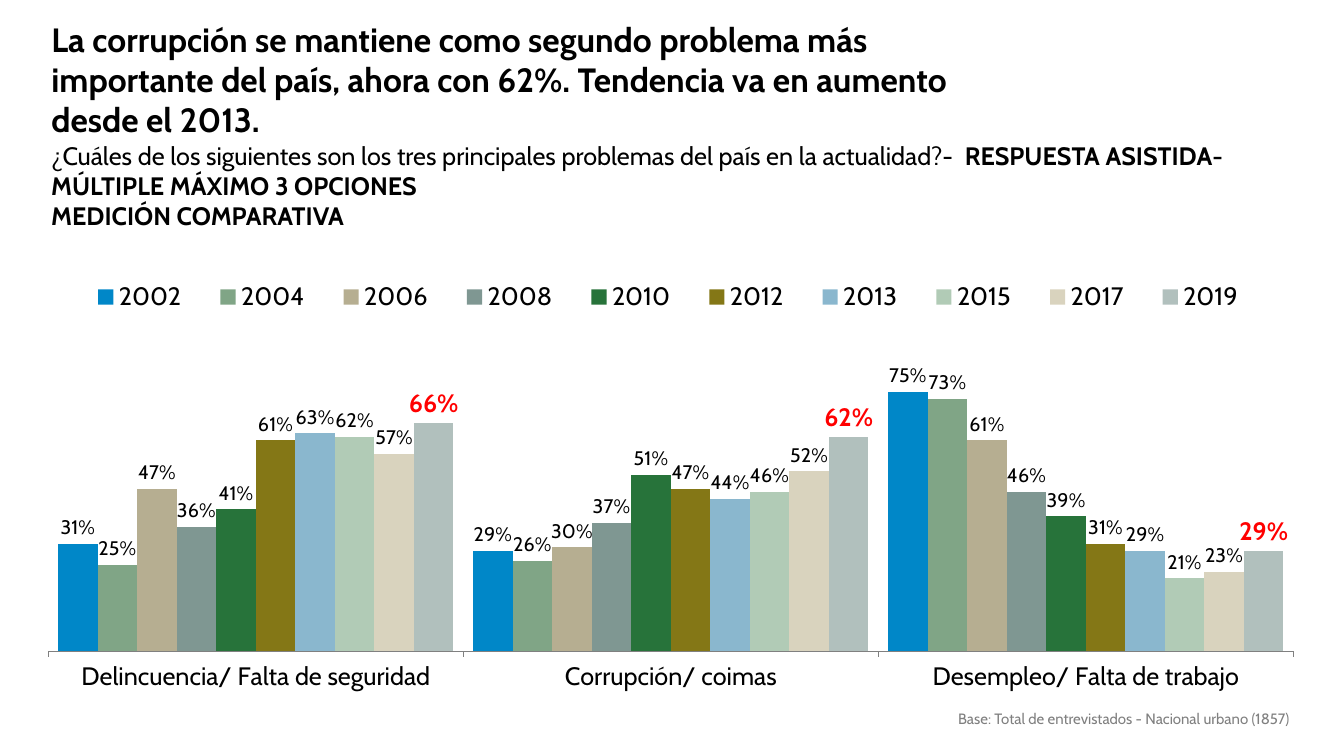
import pptx
import pptx.util
import pptx.chart.data
import pptx.dml.color
import pptx.enum.chart
import pptx.enum.text
import pptx.oxml

RGBColor = pptx.dml.color.RGBColor
Inches = pptx.util.Inches
Pt = pptx.util.Pt
ALIGN = pptx.enum.text.PP_ALIGN
ANCHOR = pptx.enum.text.MSO_ANCHOR
CHART = pptx.enum.chart

BLACK = RGBColor(0x00, 0x00, 0x00)
GRAY = RGBColor(0x80, 0x80, 0x80)
RED = RGBColor(0xFF, 0x00, 0x00)
FONT = "Cabin"
WIDTH, HEIGHT = 13.33, 7.5

TITLE = ("La corrupción se mantiene como segundo problema más importante del país, "
         "ahora con 62%. Tendencia va en aumento desde el 2013.")
QUESTION = [
    [("¿Cuáles de los siguientes son los tres principales problemas del país en la actualidad?-  ", False),
     ("RESPUESTA ASISTIDA- MÚLTIPLE MÁXIMO 3 OPCIONES", True)],
    [("MEDICIÓN COMPARATIVA", True)],
]
BASE = "Base: Total de entrevistados - Nacional urbano (1857)"
PROBLEMS = ["Delincuencia/ Falta de seguridad", "Corrupción/ coimas", "Desempleo/ Falta de trabajo"]
YEARS = [
    ("2002", (0.31, 0.29, 0.75), RGBColor(0x00, 0x87, 0xC8)),
    ("2004", (0.25, 0.26, 0.73), RGBColor(0x80, 0xA5, 0x86)),
    ("2006", (0.47, 0.30, 0.61), RGBColor(0xB6, 0xAE, 0x91)),
    ("2008", (0.36, 0.37, 0.46), RGBColor(0x7F, 0x97, 0x92)),
    ("2010", (0.41, 0.51, 0.39), RGBColor(0x27, 0x73, 0x3A)),
    ("2012", (0.61, 0.47, 0.31), RGBColor(0x84, 0x77, 0x16)),
    ("2013", (0.63, 0.44, 0.29), RGBColor(0x8A, 0xB7, 0xCE)),
    ("2015", (0.62, 0.46, 0.21), RGBColor(0xB1, 0xCB, 0xB6)),
    ("2017", (0.57, 0.52, 0.23), RGBColor(0xD9, 0xD3, 0xBE)),
    ("2019", (0.66, 0.62, 0.29), RGBColor(0xB1, 0xC0, 0xBD)),
]
TEXT_LEFT = 0.41
TITLE_AREA = (TEXT_LEFT, 0.23, 9.79, 1.11)
QUESTION_AREA = (TEXT_LEFT, 1.34, 12.35, 1.01)
BASE_AREA = (5.94, 7.01, 6.95, 0.26)
CHART_AREA = (-0.55, 2.35, 13.54, 4.97)
PLOT_SHARES = (0.076, 0.275, 0.912, 0.552)
LEGEND_SHARES = (0.09, 0.07, 0.88, 0.1)


def style(font, size, color=BLACK, bold=False):
    font.name = FONT
    font.size = Pt(size)
    font.bold = bold
    font.color.rgb = color


def add_text(page, area, lines, size, color=BLACK, align=ALIGN.LEFT, spacing=1.0):
    box = page.shapes.add_textbox(*map(Inches, area))
    frame = box.text_frame
    frame.word_wrap = True
    for index, line in enumerate(lines):
        para = frame.paragraphs[0] if index == 0 else frame.add_paragraph()
        para.alignment = align
        para.line_spacing = spacing
        for text, bold in line:
            span = para.add_run()
            span.text = text
            style(span.font, size, color, bold)


def make_layout(shares, inner=False):
    target = '<c:layoutTarget val="inner"/>' if inner else ""
    modes = '<c:xMode val="edge"/><c:yMode val="edge"/>'
    sizes = "".join(f'<c:{key} val="{share}"/>' for key, share in zip("xywh", shares))
    return pptx.oxml.parse_xml(
        '<c:layout xmlns:c="http://schemas.openxmlformats.org/drawingml/2006/chart">'
        f"<c:manualLayout>{target}{modes}{sizes}</c:manualLayout></c:layout>")


def place(parent, layout, index):
    for child in list(parent):
        if child.tag == layout.tag:
            parent.remove(child)
    parent.insert(index, layout)


def add_problem_chart(page):
    data = pptx.chart.data.CategoryChartData(number_format="0%")
    data.categories = PROBLEMS
    for year, values, color in YEARS:
        data.add_series(year, values)
    chart = page.shapes.add_chart(
        CHART.XL_CHART_TYPE.COLUMN_CLUSTERED, *map(Inches, CHART_AREA), data).chart
    style(chart.font, 18)
    chart.has_title = False

    chart.has_legend = True
    chart.legend.position = CHART.XL_LEGEND_POSITION.TOP
    chart.legend.include_in_layout = False
    style(chart.legend.font, 18)

    values_axis = chart.value_axis
    values_axis.minimum_scale = 0
    values_axis.maximum_scale = 0.8
    values_axis.has_major_gridlines = False
    values_axis.visible = False
    problem_axis = chart.category_axis
    problem_axis.major_tick_mark = CHART.XL_TICK_MARK.OUTSIDE
    problem_axis.format.line.color.rgb = GRAY
    problem_axis.format.line.width = Pt(0.75)
    style(problem_axis.tick_labels.font, 18)

    plot = chart.plots[0]
    plot.gap_width = 50
    plot.overlap = 0
    plot.vary_by_categories = False
    for series, (year, values, color) in zip(plot.series, YEARS):
        series.format.fill.solid()
        series.format.fill.fore_color.rgb = color
        labels = series.data_labels
        labels.show_value = True
        labels.number_format = "0%"
        labels.number_format_is_linked = False
        labels.position = CHART.XL_LABEL_POSITION.OUTSIDE_END
        if year == YEARS[-1][0]:
            style(labels.font, 18, RED, True)
        else:
            style(labels.font, 14)

    place(chart.element.chart.plotArea, make_layout(PLOT_SHARES, True), 0)
    place(chart.element.chart.legend, make_layout(LEGEND_SHARES), 1)


def main():
    deck = pptx.Presentation()
    deck.slide_width, deck.slide_height = Inches(WIDTH), Inches(HEIGHT)
    page = deck.slides.add_slide(deck.slide_layouts[5])
    title = page.shapes.title
    title.left, title.top, title.width, title.height = map(Inches, TITLE_AREA)
    frame = title.text_frame
    frame.text = TITLE
    frame.word_wrap = True
    frame.auto_size = pptx.enum.text.MSO_AUTO_SIZE.NONE
    frame.vertical_anchor = ANCHOR.MIDDLE
    frame.paragraphs[0].alignment = ALIGN.LEFT
    style(frame.paragraphs[0].runs[0].font, 24, BLACK, True)
    add_problem_chart(page)
    add_text(page, QUESTION_AREA, QUESTION, 18)
    add_text(page, BASE_AREA, [[(BASE, False)]], 10.7, GRAY, ALIGN.RIGHT, 0.9)
    deck.save("out.pptx")


if __name__ == "__main__":
    main()
